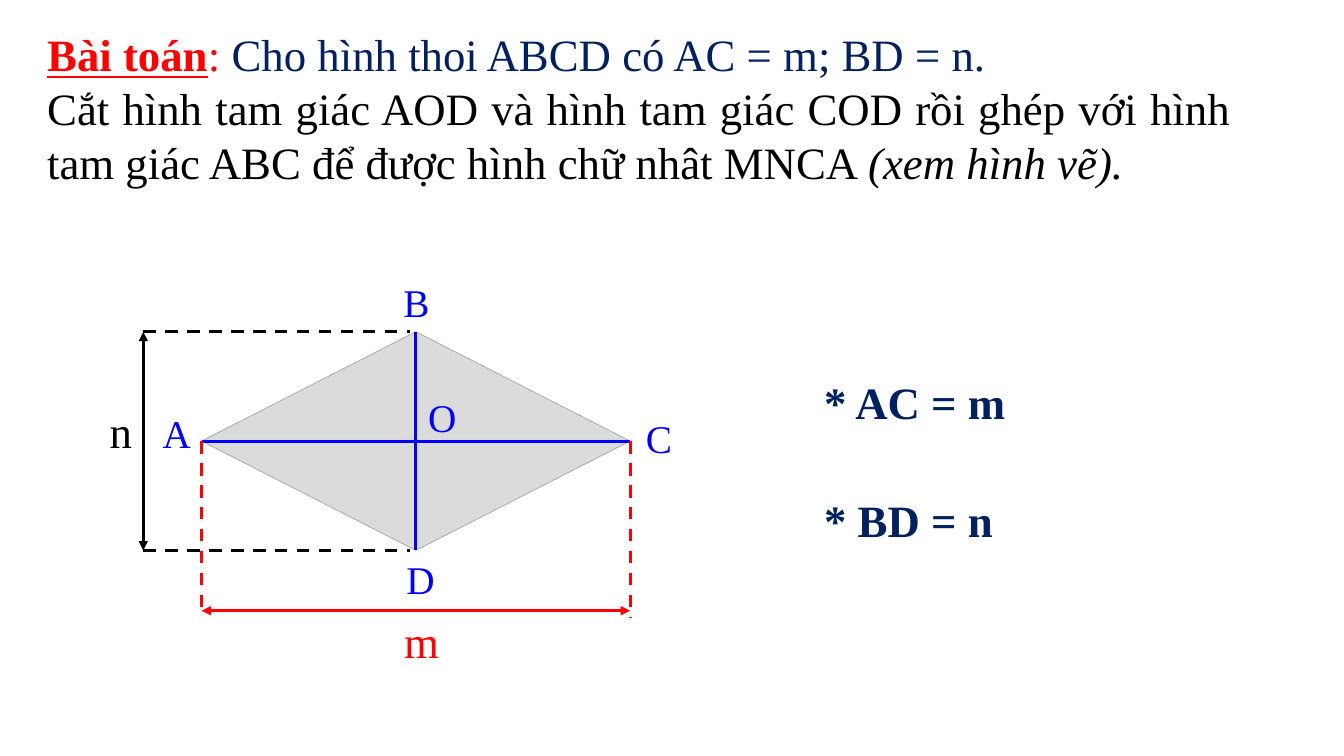
import pptx
import pptx.util
import pptx.dml.color
import pptx.enum.dml
import pptx.enum.shapes
import pptx.enum.text
from lxml import etree
from pptx.util import Cm

ALIGN = pptx.enum.text.PP_ALIGN
THEME = {
    "font": "Times New Roman", "body": 32, "vertex": 28, "line": 2.25, "edge": 0.5,
    "red": "FF0000", "navy": "002060", "black": "000000", "blue": "0000FF",
    "fill": "DBDBDB", "outline": "A5A5A5",
}


def rgb(name):
    return pptx.dml.color.RGBColor.from_string(THEME[name])


def add_text(left, top, width, height, paragraphs, size="body"):
    frame = slide.shapes.add_textbox(Cm(left), Cm(top), Cm(width), Cm(height)).text_frame
    frame.word_wrap = True
    for index, (align, runs) in enumerate(paragraphs):
        paragraph = frame.paragraphs[0] if index == 0 else frame.add_paragraph()
        paragraph.alignment = align
        for text, color, *styles in runs:
            run = paragraph.add_run()
            run.text = text
            run.font.name = THEME["font"]
            run.font.size = pptx.util.Pt(THEME[size])
            run.font.color.rgb = rgb(color)
            for style in styles:
                setattr(run.font, style, True)


presentation = pptx.Presentation()
presentation.slide_width = Cm(33.87)
presentation.slide_height = Cm(19.05)
slide = presentation.slides.add_slide(presentation.slide_layouts[6])

add_text(0.94, 0.56, 30.35, 4.37, [
    (ALIGN.LEFT, [
        ("Bài toán", "red", "bold", "underline"),
        (": ", "red"),
        ("Cho hình thoi ABCD có AC = m; BD = n.", "navy"),
    ]),
    (ALIGN.JUSTIFY, [
        ("Cắt hình tam giác AOD và hình tam giác COD rồi ghép với hình "
         "tam giác ABC để được hình chữ nhât MNCA ", "black"),
        ("(xem hình vẽ).", "black", "italic"),
    ]),
])

left, top, width, height = 5.08, 8.36, 10.8, 5.51
right, bottom = left + width, top + height
center_x, center_y = left + width / 2, top + height / 2
n_axis, m_axis, dash_end = 3.61, 15.39, 10.34

rhombus = slide.shapes.add_shape(
    pptx.enum.shapes.MSO_SHAPE.DIAMOND, Cm(left), Cm(top), Cm(width), Cm(height))
rhombus.shadow.inherit = False
rhombus.fill.solid()
rhombus.fill.fore_color.rgb = rgb("fill")
rhombus.line.color.rgb = rgb("outline")
rhombus.line.width = pptx.util.Pt(THEME["edge"])

segments = [
    (center_x, top, center_x, bottom, "blue", "solid", 0, 2),
    (left, center_y, right, center_y, "blue", "solid", 1, 3),
    (n_axis, top, dash_end, top, "black", "dash", None, None),
    (n_axis, bottom, dash_end, bottom, "black", "dash", None, None),
    (n_axis, top, n_axis, bottom, "black", "arrows", None, None),
    (left, center_y, left, m_axis, "red", "dash", 1, None),
    (right, center_y, right, m_axis + 0.15, "red", "dash", 3, None),
    (left, m_axis, right, m_axis, "red", "arrows", None, None),
]
for x1, y1, x2, y2, color, style, begin_site, end_site in segments:
    segment = slide.shapes.add_connector(
        pptx.enum.shapes.MSO_CONNECTOR.STRAIGHT, Cm(x1), Cm(y1), Cm(x2), Cm(y2))
    if begin_site is not None:
        segment.begin_connect(rhombus, begin_site)
    if end_site is not None:
        segment.end_connect(rhombus, end_site)
    segment.line.color.rgb = rgb(color)
    segment.line.width = pptx.util.Pt(THEME["line"])
    if style == "dash":
        segment.line.dash_style = pptx.enum.dml.MSO_LINE.DASH
    properties = segment._element.spPr
    if style == "arrows":
        outline = properties.find(pptx.oxml.ns.qn("a:ln"))
        for end in ("a:headEnd", "a:tailEnd"):
            etree.SubElement(outline, pptx.oxml.ns.qn(end), type="triangle")
    etree.SubElement(properties, pptx.oxml.ns.qn("a:effectLst"))

labels = [
    ("A", 3.68, 10.19, 1.55, "blue", "vertex", ALIGN.CENTER),
    ("B", 9.53, 6.88, 1.93, "blue", "vertex", ALIGN.CENTER),
    ("C", 15.93, 10.31, 1.35, "blue", "vertex", ALIGN.CENTER),
    ("D", 9.73, 13.87, 1.73, "blue", "vertex", ALIGN.CENTER),
    ("O", 10.54, 9.78, 1.35, "blue", "vertex", ALIGN.LEFT),
    ("m", 9.09, 15.34, 3.07, "red", "body", ALIGN.CENTER),
    ("n", 2.08, 10.06, 1.93, "black", "body", ALIGN.CENTER),
]
for name, x, y, label_width, color, size, align in labels:
    add_text(x, y, label_width, 1.5, [(align, [(name, color)])], size)

for row, diagonal in enumerate(["* AC = m", "* BD = n"]):
    add_text(20.52, 9.32 + 2.97 * row, 5.5, 1.6,
             [(ALIGN.LEFT, [(diagonal, "navy", "bold")])])

presentation.save("out.pptx")
